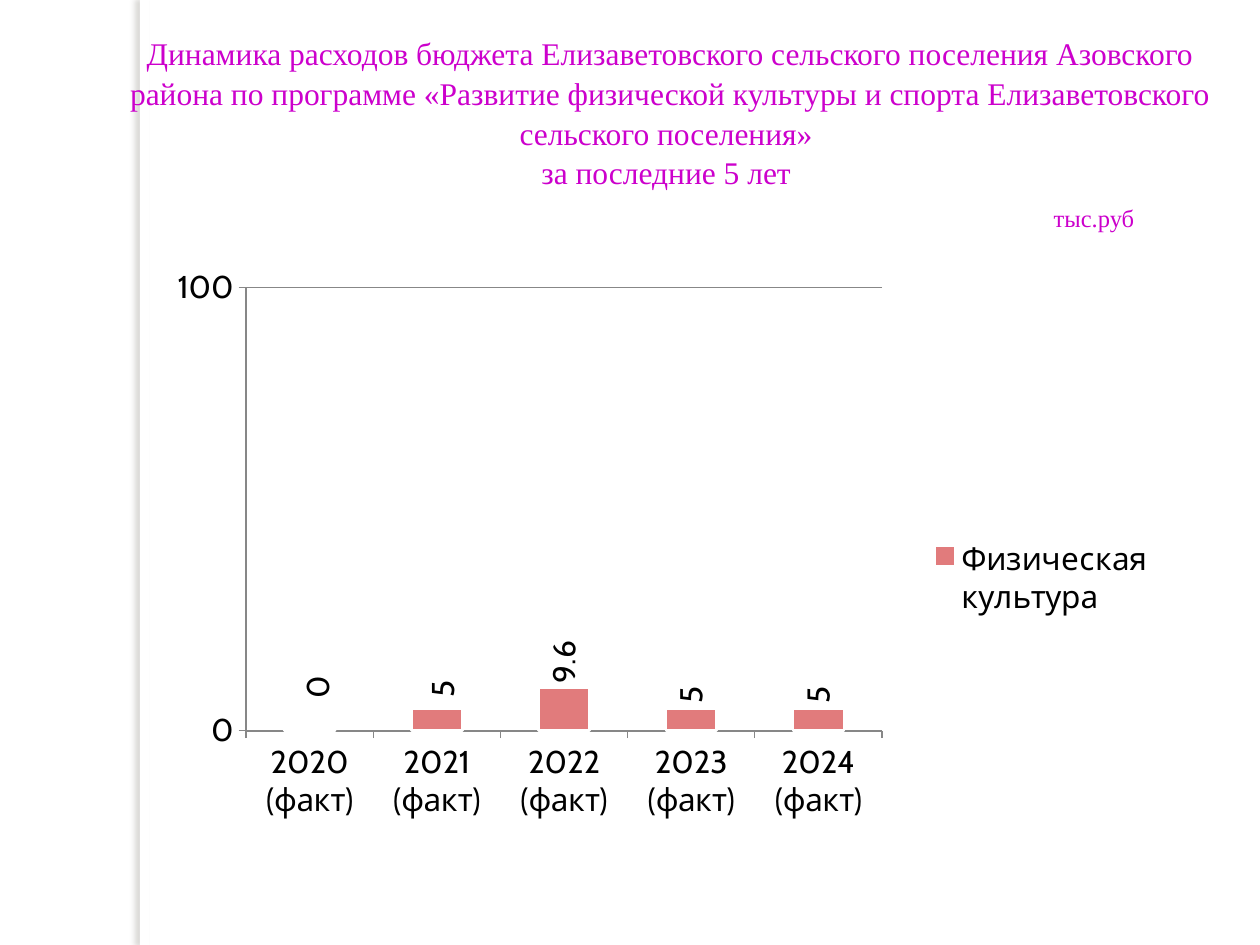
from lxml import etree
from pptx import Presentation
from pptx.chart.data import CategoryChartData
from pptx.dml.color import RGBColor
from pptx.enum.chart import XL_CHART_TYPE, XL_LABEL_POSITION, XL_LEGEND_POSITION, XL_TICK_MARK
from pptx.enum.shapes import MSO_SHAPE
from pptx.enum.text import MSO_AUTO_SIZE, PP_ALIGN
from pptx.oxml import parse_xml
from pptx.oxml.ns import nsdecls, qn
from pptx.util import Cm, Pt

COLORS = {
    "white": "FFFFFF",
    "title": "CC00CC",
    "bar": "E17B7C",
    "axis": "878787",
    "text": "000000",
    "shadow": "736F63",
}


def color(name):
    return RGBColor.from_string(COLORS[name])


def chart_layout(**values):
    """Return a c:layout element; values are fractions of the chart area."""
    layout = etree.Element(qn("c:layout"))
    manual = etree.SubElement(layout, qn("c:manualLayout"))
    for tag, value in values.items():
        etree.SubElement(manual, qn(f"c:{tag}")).set("val", str(value))
    return layout


deck = Presentation()
deck.slide_width, deck.slide_height = Cm(25.4), Cm(19.05)
page = deck.slides.add_slide(deck.slide_layouts[6])

# Vertical strip with a soft shadow to the left
strip = page.shapes.add_shape(MSO_SHAPE.RECTANGLE, Cm(2.82), 0, Cm(0.2), deck.slide_height)
strip.fill.solid()
strip.fill.fore_color.rgb = color("white")
strip.line.fill.background()
strip.element.spPr.append(parse_xml(
    f'<a:effectLst {nsdecls("a")}>'
    f'<a:outerShdw blurRad="{Pt(3)}" dist="{Pt(3)}" dir="10800000" algn="tl" rotWithShape="0">'
    f'<a:srgbClr val="{COLORS["shadow"]}"><a:alpha val="25000"/></a:srgbClr>'
    '</a:outerShdw></a:effectLst>'))

# Title and unit
box = page.shapes.add_textbox(Cm(2.31), Cm(0.53), Cm(22.4), Cm(4.19))
frame = box.text_frame
frame.word_wrap = True
frame.auto_size = MSO_AUTO_SIZE.SHAPE_TO_FIT_TEXT
lines = [
    ("Динамика расходов бюджета Елизаветовского сельского поселения Азовского района "
     "по программе «Развитие физической культуры и спорта Елизаветовского сельского поселения» ",
     18, PP_ALIGN.CENTER),
    ("за последние 5 лет ", 18, PP_ALIGN.CENTER),
    ("тыс.руб", 14, PP_ALIGN.LEFT),
]
for number, (text, size, alignment) in enumerate(lines):
    para = frame.paragraphs[0] if number == 0 else frame.add_paragraph()
    para.alignment = alignment
    para.line_spacing = 1.05
    span = para.add_run()
    span.text = text
    span.font.size = Pt(size)
    span.font.name = "Times New Roman"
    span.font.color.rgb = color("title")
para.space_before = Pt(6)
unit_properties = para._p.get_or_add_pPr()
unit_properties.set("marL", str(Cm(18.68)))
unit_properties.set("indent", "0")

# Column chart
data = CategoryChartData()
data.categories = [f"{year} (факт)" for year in range(2020, 2025)]
data.add_series("Физическая культура", (0, 5, 9.6, 5, 5))
chart = page.shapes.add_chart(
    XL_CHART_TYPE.COLUMN_CLUSTERED, Cm(3.1), Cm(5.33), Cm(20.68), Cm(11.61), data).chart
chart.has_title = False
chart.font.name = "Cabin"
chart.font.size = Pt(18)
chart.font.color.rgb = color("text")

plot = chart.plots[0]
plot.gap_width = 150
plot.vary_by_categories = False
series = plot.series[0]
series.format.fill.solid()
series.format.fill.fore_color.rgb = color("bar")
series.format.line.color.rgb = color("white")
series.format.line.width = Pt(1.5)

amounts = chart.value_axis
amounts.minimum_scale, amounts.maximum_scale, amounts.major_unit = 0, 100, 100
amounts.has_major_gridlines = True
years = chart.category_axis
years.has_major_gridlines = False
for axis in (amounts, years):
    axis.major_tick_mark = XL_TICK_MARK.OUTSIDE
    axis.minor_tick_mark = XL_TICK_MARK.NONE
    axis.format.line.color.rgb = color("axis")
    axis.format.line.width = Pt(0.75)
amounts.major_gridlines.format.line.color.rgb = color("axis")
amounts.major_gridlines.format.line.width = Pt(1)

# Upright value labels, the first two slightly moved
labels = series.data_labels
labels.show_value = True
point_labels = [series.points[index].data_label for index in (0, 1)]
for label in (labels, *point_labels):
    label.position = XL_LABEL_POSITION.OUTSIDE_END
    label.font.size = Pt(18)
    label.font.name = "Cabin"
    label.font.color.rgb = color("text")
space = chart.element
for body in space.findall(f".//{qn('c:dLbls')}//{qn('a:bodyPr')}"):
    body.set("rot", "-5400000")
    body.set("vert", "horz")
shifts = [(0.008, -0.047), (0.006, -0.011)]
for label_element, (x, y) in zip(space.iter(qn("c:dLbl")), shifts):
    label_element.find(qn("c:idx")).addnext(chart_layout(x=x, y=y))

chart.has_legend = True
chart.legend.position = XL_LEGEND_POSITION.RIGHT
chart.legend.include_in_layout = False
legend = space.find(f".//{qn('c:legend')}")
plot_area = space.find(f".//{qn('c:plotArea')}")
for part in (legend, plot_area):
    for old in part.findall(qn("c:layout")):
        part.remove(old)
legend.find(qn("c:legendPos")).addnext(
    chart_layout(xMode="edge", yMode="edge", x=0.74, y=0.47, w=0.25, h=0.15))
plot_area.insert(0, chart_layout(
    layoutTarget="inner", xMode="edge", yMode="edge", x=0.09, y=0.04, w=0.62, h=0.77))

deck.save("out.pptx")
